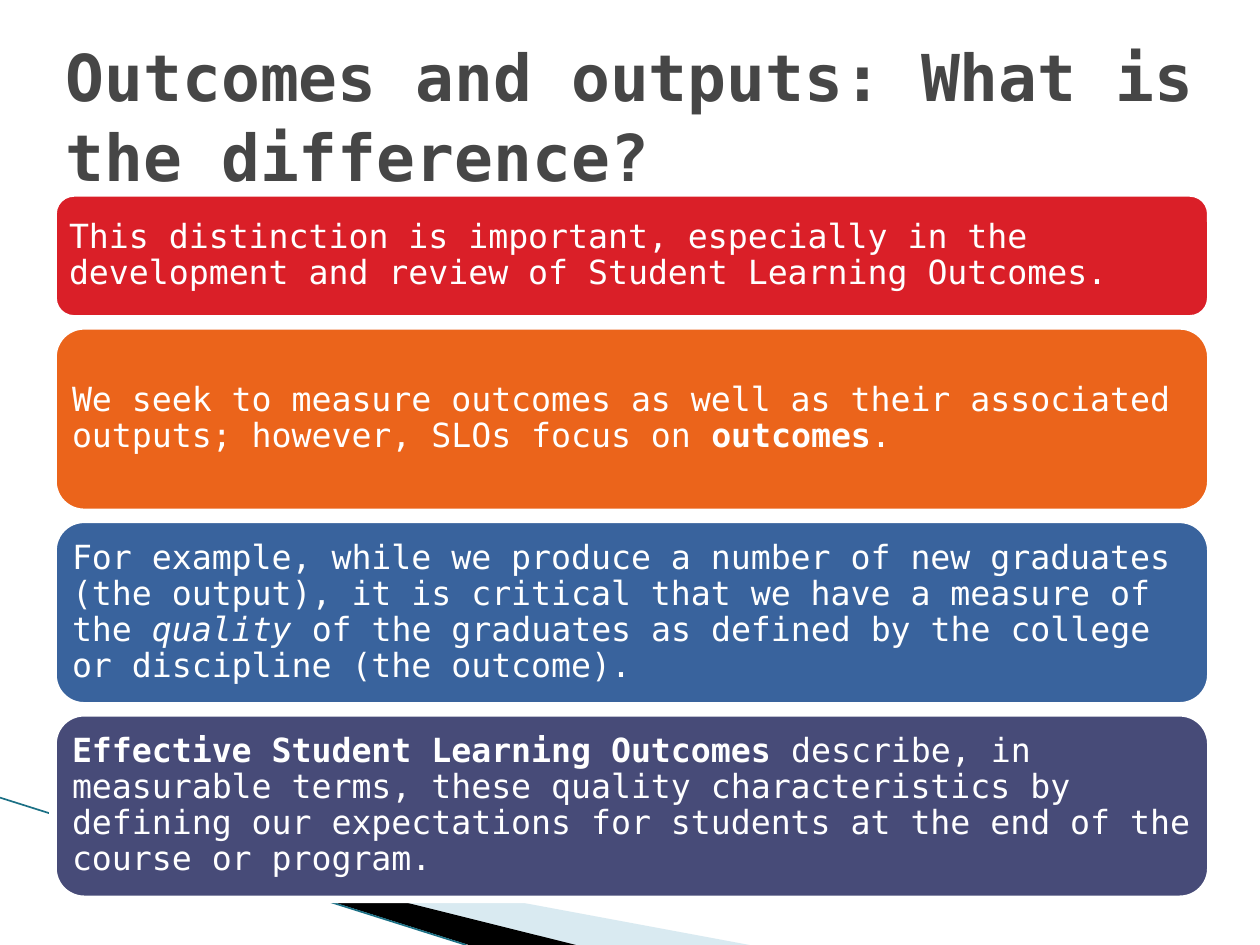
from pptx import Presentation
from pptx.dml.color import RGBColor
from pptx.enum.shapes import MSO_CONNECTOR, MSO_SHAPE
from pptx.enum.text import MSO_ANCHOR, MSO_AUTO_SIZE, PP_ALIGN
from pptx.oxml.ns import qn
from pptx.util import Cm, Pt
from lxml.etree import SubElement

FONT = "DejaVu Sans Mono"
LEFT, WIDTH = 1.07, 23.34
CARDS_TOP, CARD_GAP = 3.89, 0.14

# Each card: height in cm, fill, runs as (text, style)
CARDS = [
    (2.54, "DA1F28", [
        ("This distinction is important, especially in the development and "
         "review of Student Learning Outcomes.", "")]),
    (3.76, "EB641B", [
        ("We seek to measure outcomes as well as their associated outputs; "
         "however, SLOs focus on ", ""),
        ("outcomes", "bold"),
        (".", "")]),
    (3.76, "39639D", [
        ("For example, while we produce a number of new graduates (the output), "
         "it is critical that we have a measure of the ", ""),
        ("quality ", "italic"),
        ("of the graduates as defined by the college or discipline "
         "(the outcome).", "")]),
    (3.76, "474B78", [
        ("Effective Student Learning Outcomes ", "bold"),
        ("describe, in measurable terms, these quality characteristics by "
         "defining our expectations for students at the end of the course or "
         "program.", "")]),
]


def color(value):
    return RGBColor.from_string(value)


def add_run(paragraph, text, size, fill, style=""):
    run = paragraph.add_run()
    run.text = text
    font = run.font
    font.name, font.size = FONT, Pt(size)
    font.bold, font.italic = style == "bold", style == "italic"
    font.color.rgb = color(fill)


def add_wedge(slide, points, fill, opacity=100):
    corners = [(Cm(x), Cm(y)) for x, y in points]
    builder = slide.shapes.build_freeform(*corners[0], scale=1.0)
    builder.add_line_segments(corners[1:], close=True)
    shape = builder.convert_to_shape()
    shape.shadow.inherit = False
    shape.fill.solid()
    shape.fill.fore_color.rgb = color(fill)
    shape.line.fill.background()
    if opacity < 100:
        solid_color = shape.fill._xPr.find(qn("a:solidFill"))[0]
        SubElement(solid_color, qn("a:alpha")).set("val", str(opacity * 1000))


def add_swoosh(slide, left, top, bottom):
    """Corner decoration: two wedges and a thin line running off the bottom."""
    start = left + 1.35, top + 0.41
    add_wedge(slide, [start, (left + 15.11, bottom), (left + 11.58, bottom)],
              "A0CBDC", opacity=40)
    add_wedge(slide, [start, (left + 11.61, bottom), (left + 9.45, bottom)],
              "000000")
    line = slide.shapes.add_connector(
        MSO_CONNECTOR.STRAIGHT, Cm(left), Cm(top), Cm(left + 9.4), Cm(bottom))
    line.line.color.rgb = color("1B7085")
    line.line.width = Pt(0.95)
    SubElement(line._element.spPr, qn("a:effectLst"))


def place_title(slide, left, top, width, height):
    title = slide.shapes.title
    title.left, title.top = Cm(left), Cm(top)
    title.width, title.height = Cm(width), Cm(height)
    frame = title.text_frame
    frame.word_wrap = True
    frame.auto_size = MSO_AUTO_SIZE.NONE
    frame.vertical_anchor = MSO_ANCHOR.MIDDLE
    frame.margin_right = Cm(0.15)
    paragraph = frame.paragraphs[0]
    paragraph.alignment = PP_ALIGN.LEFT
    paragraph.line_spacing = 1.04
    add_run(paragraph, "Outcomes and outputs: What is the difference?",
            36.9, "464646", "bold")


def add_card(slide, left, top, width, height, fill, runs):
    card = slide.shapes.add_shape(
        MSO_SHAPE.ROUNDED_RECTANGLE, Cm(left), Cm(top), Cm(width), Cm(height))
    card.shadow.inherit = False
    card.fill.solid()
    card.fill.fore_color.rgb = color(fill)
    card.line.color.rgb = color("FFFFFF")
    card.line.width = Pt(4.33)
    frame = card.text_frame
    frame.word_wrap = True
    frame.vertical_anchor = MSO_ANCHOR.MIDDLE
    frame.margin_left = frame.margin_top = frame.margin_bottom = Cm(0.2)
    frame.margin_right = Cm(0.1)
    paragraph = frame.paragraphs[0]
    paragraph.alignment = PP_ALIGN.LEFT
    paragraph.line_spacing = 0.9
    for text, style in runs:
        add_run(paragraph, text, 19, "FFFFFF", style)


def add_card_stack(slide, left, top, width):
    for height, fill, runs in CARDS:
        add_card(slide, left, top, width, height, fill, runs)
        top += height + CARD_GAP


def main():
    presentation = Presentation()
    presentation.slide_width, presentation.slide_height = Cm(25.4), Cm(19.05)
    slide = presentation.slides.add_slide(presentation.slide_layouts[5])
    add_swoosh(slide, 0, 16.08, 19.05)
    add_card_stack(slide, LEFT, CARDS_TOP, WIDTH)
    place_title(slide, LEFT, 0.84, WIDTH, 2.92)
    presentation.save("out.pptx")


if __name__ == "__main__":
    main()
